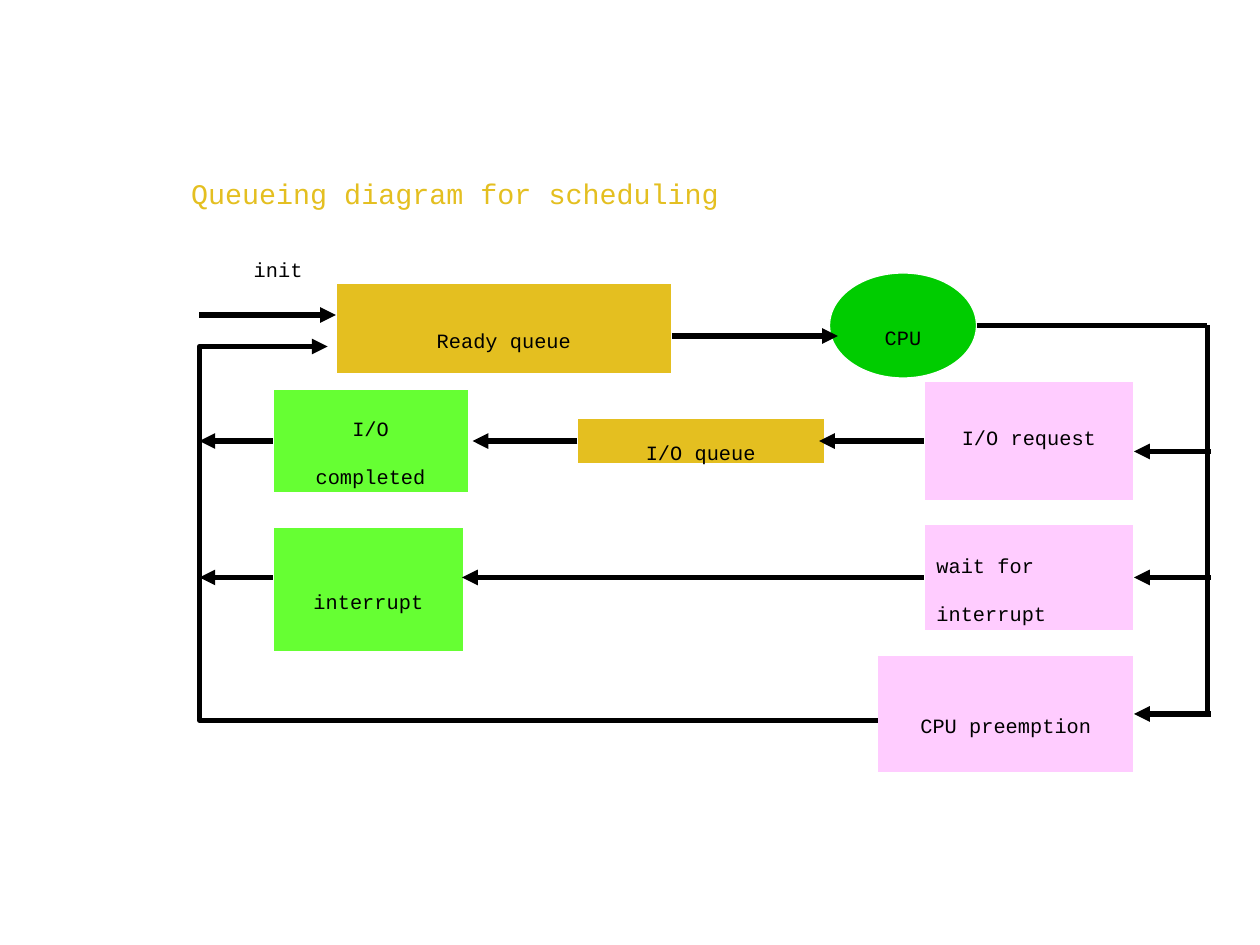
from dataclasses import dataclass
from typing import Optional

from lxml import etree
from pptx import Presentation
from pptx import util as u
from pptx.dml.color import RGBColor
from pptx.enum import shapes, text
from pptx.oxml.ns import qn

BLACK = RGBColor(0x00, 0x00, 0x00)
WHITE = RGBColor(0xFF, 0xFF, 0xFF)
GOLD = RGBColor(0xE4, 0xBF, 0x20)
GREEN = RGBColor(0x00, 0xCC, 0x00)
LIME = RGBColor(0x66, 0xFF, 0x33)
PINK = RGBColor(0xFF, 0xCC, 0xFF)

FONT = "Courier New"
CELL = u.Inches(10) / 120
LEFT, RIGHT = 1, 3
RECT = shapes.MSO_SHAPE.RECTANGLE
OVAL = shapes.MSO_SHAPE.OVAL
CENTER = text.PP_ALIGN.CENTER
START = text.PP_ALIGN.LEFT
MIDDLE = text.MSO_ANCHOR.MIDDLE
TOP = text.MSO_ANCHOR.TOP

IO_ROW, INTERRUPT_ROW, PREEMPT_ROW, CPU_ROW = 42, 55, 68, 31
RETURN_COL, EXIT_COL = 19, 115


@dataclass
class Node:
    label: str
    col: float
    row: float
    cols: float
    rows: float
    fill: RGBColor
    shape: shapes.MSO_SHAPE = RECT
    align: text.PP_ALIGN = CENTER
    anchor: text.MSO_ANCHOR = MIDDLE
    top: float = 0.05
    wrap: bool = True


@dataclass
class Link:
    start: tuple
    end: tuple
    arrow: bool = True
    begin: Optional[tuple] = None
    finish: Optional[tuple] = None


NODES = {
    "ready": Node("Ready queue", 32, 27, 32, 8.6, GOLD),
    "cpu": Node("CPU", 79, 26, 14, 10, GREEN, OVAL, wrap=False),
    "done": Node("I/O\ncompleted", 26, 37.1, 18.6, 9.8, LIME, wrap=False),
    "queue": Node("I/O queue", 55, 39.8, 23.5, 4.4, GOLD, wrap=False),
    "request": Node("I/O request", 88, 36.3, 20, 11.4, PINK, anchor=TOP, top=0.16),
    "wait": Node("wait for\ninterrupt", 88, 49.9, 20, 10.2, PINK, align=START),
    "preempt": Node("CPU preemption", 83.6, 62.4, 24.4, 11.2, PINK),
    "interrupt": Node("interrupt", 26, 50.2, 18.2, 11.9, LIME, wrap=False),
}

LINKS = [
    Link((RETURN_COL, 30), (32, 30)),
    Link((64, 32), (79.8, 32)),
    Link((93, CPU_ROW), (EXIT_COL, CPU_ROW), False, begin=("cpu", RIGHT)),
    Link((EXIT_COL, PREEMPT_ROW), (EXIT_COL, CPU_ROW), False),
    Link((115.3, IO_ROW + 1), (108, IO_ROW + 1)),
    Link((115.3, INTERRUPT_ROW), (108, INTERRUPT_ROW), finish=("wait", RIGHT)),
    Link((115.3, PREEMPT_ROW), (108, PREEMPT_ROW), finish=("preempt", RIGHT)),
    Link((88, IO_ROW), (78, IO_ROW), begin=("request", LEFT)),
    Link((55, IO_ROW), (45, IO_ROW), begin=("queue", LEFT)),
    Link((26, IO_ROW), (RETURN_COL, IO_ROW), begin=("done", LEFT)),
    Link((88, INTERRUPT_ROW), (44, INTERRUPT_ROW), begin=("wait", LEFT)),
    Link((26, INTERRUPT_ROW), (RETURN_COL, INTERRUPT_ROW)),
]


def cells(*values: float) -> list[int]:
    return [round(v * CELL) for v in values]


def write(sp, content: str, *, size: float = 20, color: RGBColor = BLACK,
          align=CENTER, anchor=TOP, top: float = 0.05, wrap: bool = True) -> None:
    tf = sp.text_frame
    tf.auto_size = text.MSO_AUTO_SIZE.NONE
    tf.word_wrap = wrap
    tf.vertical_anchor = anchor
    tf.margin_left = tf.margin_right = u.Inches(0.1)
    tf.margin_top, tf.margin_bottom = u.Inches(top), u.Inches(0.05)
    for i, line in enumerate(content.split("\n")):
        p = tf.add_paragraph() if i else tf.paragraphs[0]
        p.alignment = align
        r = p.add_run()
        r.text = line
        r.font.name = FONT
        r.font.size = u.Pt(size)
        r.font.color.rgb = color
        r.font._element.set("baseline", "-25000")


def add_node(s, node: Node):
    sp = s.shapes.add_shape(
        node.shape, *cells(node.col, node.row, node.cols, node.rows))
    sp.shadow.inherit = False
    sp.fill.solid()
    sp.fill.fore_color.rgb = node.fill
    sp.line.color.rgb = WHITE
    sp.line.width = u.Pt(0.75)
    write(sp, node.label, align=node.align, anchor=node.anchor,
          top=node.top, wrap=node.wrap)
    return sp


def style_line(sp, arrow_end: Optional[str]) -> None:
    sp.line.color.rgb = BLACK
    sp.line.width = u.Pt(3)
    if arrow_end:
        etree.SubElement(sp.line._get_or_add_ln(), qn(arrow_end), type="triangle")


def add_link(s, link: Link, boxes: dict) -> None:
    c = s.shapes.add_connector(
        shapes.MSO_CONNECTOR.STRAIGHT, *cells(*link.start, *link.end))
    style_line(c, "a:tailEnd" if link.arrow else None)
    etree.SubElement(c._element.spPr, qn("a:effectLst"))
    if link.begin:
        c.begin_connect(boxes[link.begin[0]], link.begin[1])
    if link.finish:
        c.end_connect(boxes[link.finish[0]], link.finish[1])


def add_return_path(s) -> None:
    points = [(31.2, 33), (RETURN_COL, 33), (RETURN_COL, 68.6), (83.6, 68.6)]
    fb = s.shapes.build_freeform(*cells(*points[0]))
    fb.add_line_segments([cells(*pt) for pt in points[1:]], close=False)
    sp = fb.convert_to_shape()
    sp.shadow.inherit = False
    sp.fill.background()
    style_line(sp, "a:headEnd")


def main() -> None:
    prs = Presentation()
    prs.slide_width, prs.slide_height = cells(120, 90)
    s = prs.slides.add_slide(prs.slide_layouts[5])

    title = s.shapes.title
    title.left, title.top, title.width, title.height = cells(17, 13, 94, 6.8)
    write(title, "Queueing diagram for scheduling", size=28, color=GOLD, align=START)

    boxes = {key: add_node(s, node) for key, node in NODES.items()}
    add_return_path(s)
    for link in LINKS:
        add_link(s, link, boxes)
    write(s.shapes.add_textbox(*cells(20, 21.7, 13, 5.3)), "init")

    prs.save("out.pptx")


if __name__ == "__main__":
    main()
